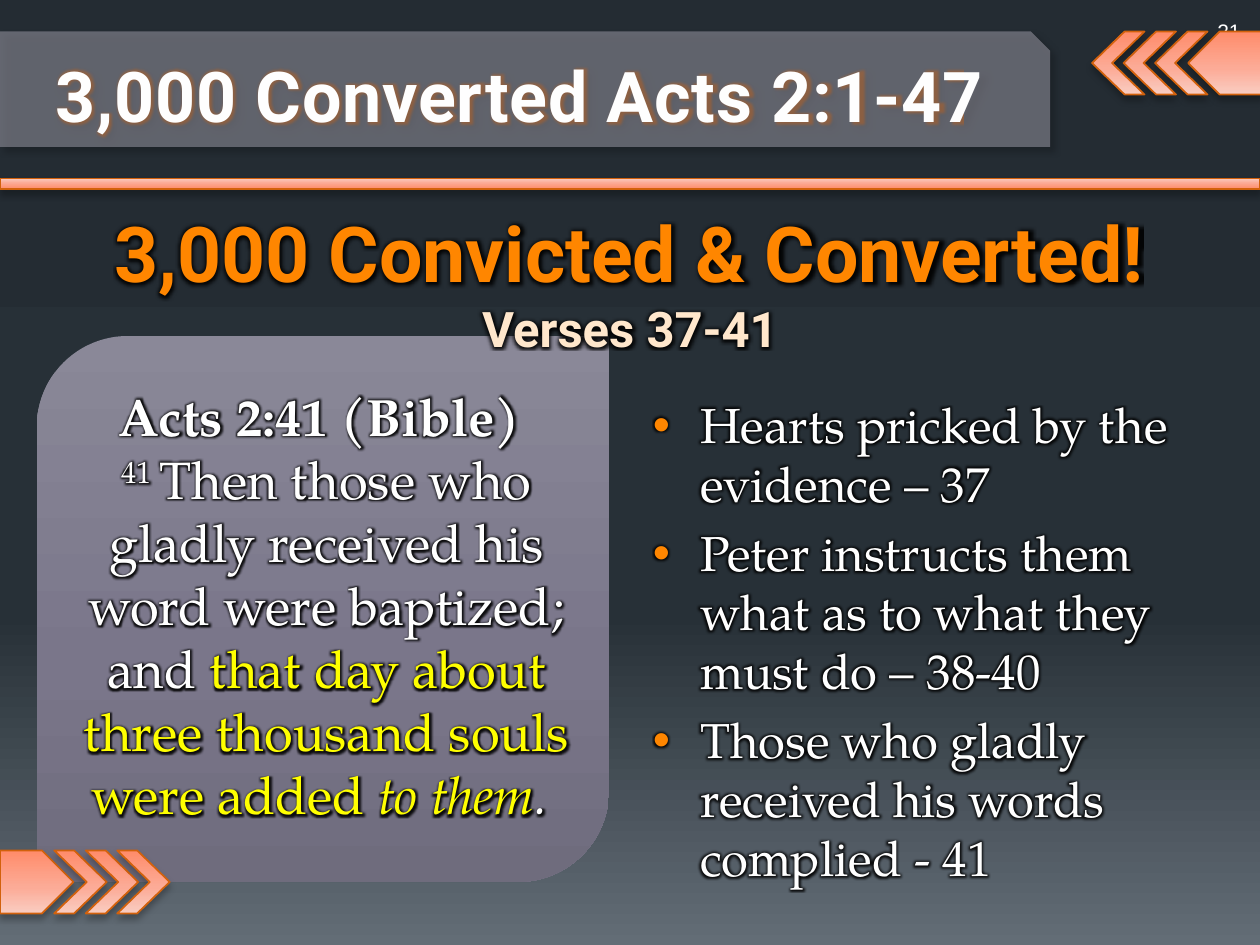
from dataclasses import dataclass, field
from typing import Any, Optional

from lxml import etree
from pptx import Presentation
from pptx import util as u
from pptx.dml import color as dml
from pptx.enum import shapes, text
from pptx.oxml import ns

Pt = u.Pt
Kind = shapes.MSO_SHAPE
Align = text.PP_ALIGN

HUES = {
    "white": "FFFFFF", "pale": "FEFEFE", "black": "000000",
    "orange": "FF8600", "cream": "FFE7CC", "yellow": "FFFF00",
    "rust": "D2610C", "slate": "646073", "mist": "A8A6B2",
}
FADES = {
    "night": [(0, "242C33"), (65, "273037"), (100, "636D76")],
    "panel": [(0, "8A8898"), (60, "7A768A"), (100, "6F6C7D")],
    "coral": [(0, "F9CDC2"), (41, "FCAB97"), (100, "FF8C6A")],
}
HEAD, BODY = "Roboto", "TeX Gyre Pagella"


@dataclass
class Box:
    x: float
    y: float
    w: float
    h: float


@dataclass
class Run:
    words: str
    size: float
    face: str
    hue: str = "white"
    form: dict[str, Any] = field(default_factory=dict)
    glow: Optional[tuple[str, int, float]] = ("black", 90, 4)
    raised: bool = False
    split: bool = False


@dataclass
class Para:
    runs: list[Run]
    form: dict[str, Any] = field(default_factory=dict)
    dot: bool = False


def node(parent: Any, tag: str, **attrs: Any) -> Any:
    return etree.SubElement(parent, ns.qn("a:" + tag), {k: str(v) for k, v in attrs.items()})


def tint(parent: Any, hue: str, alpha: int = 100) -> None:
    shade = node(parent, "srgbClr", val=hue)
    if alpha < 100:
        node(shade, "alpha", val=alpha * 1000)


def fade(fill: Any, root: Any, name: str, angle: int = 270) -> None:
    fill.gradient()
    fill.gradient_angle = angle
    stops = root.find(".//" + ns.qn("a:gsLst"))
    for stop in list(stops):
        stops.remove(stop)
    for pos, hue in FADES[name]:
        tint(node(stops, "gs", pos=pos * 1000), hue)


def shade(shape: Any, alpha: int, turn: int) -> None:
    list_ = shape.element.spPr.find(ns.qn("a:effectLst"))
    cast = node(list_, "outerShdw", blurRad=Pt(4), dist=Pt(3), dir=turn * 60000, rotWithShape=0)
    tint(cast, HUES["black"], alpha)


def draw(slide: Any, kind: Any, box: Box) -> Any:
    shape = slide.shapes.add_shape(kind, Pt(box.x), Pt(box.y), Pt(box.w), Pt(box.h))
    shape.shadow.inherit = False
    shape.line.fill.background()
    return shape


def trim(slide: Any, kind: Any, box: Box, angle: int = 270, spin: int = 0) -> Any:
    shape = draw(slide, kind, box)
    fade(shape.fill, shape.element, "coral", angle)
    shape.line.color.rgb = dml.RGBColor.from_string(HUES["rust"])
    shape.line.width = Pt(1)
    shape.rotation = spin
    shade(shape, 28, 90)
    return shape


def arrows(slide: Any, y: float, back: bool) -> None:
    spin, angle = (180, 270) if back else (0, 90)
    parts = [(Kind.PENTAGON, 0, 42)] + [(Kind.CHEVRON, 31 + 18 * i, 30) for i in range(3)]
    for kind, x, w in parts:
        left = 721 - x - w if back else x
        shape = trim(slide, kind, Box(left, y, w, 36), angle, spin)
        if kind == Kind.CHEVRON:
            shape.adjustments[0] = 0.62


def write(frame: Any, paras: list[Para], anchor: Any = text.MSO_ANCHOR.TOP) -> None:
    frame.word_wrap = True
    frame.vertical_anchor = anchor
    for i, para in enumerate(paras):
        line = frame.add_paragraph() if i else frame.paragraphs[0]
        for key, val in para.form.items():
            setattr(line, key, val)
        if para.dot:
            props = line._p.get_or_add_pPr()
            props.set("marL", str(Pt(27)))
            props.set("indent", str(-Pt(27)))
            tint(node(props, "buClr"), HUES["orange"])
            node(props, "buFont", typeface="Arial")
            node(props, "buChar", char="•")
        for run in para.runs:
            say(line, run)


def say(line: Any, run: Run) -> None:
    part = line.add_run()
    part.text = run.words
    part.font.color.rgb = dml.RGBColor.from_string(HUES[run.hue])
    form = {"size": Pt(run.size), "name": run.face, **run.form}
    for key, val in form.items():
        setattr(part.font, key, val)
    props = part.font._element
    if run.raised:
        props.set("baseline", "30000")
    if run.glow:
        hue, alpha, rad = run.glow
        list_ = node(props, "effectLst")
        tint(node(list_, "glow", rad=Pt(rad)), HUES[hue], alpha)
        props.find(ns.qn("a:latin")).addprevious(list_)
    if run.split:
        line.add_line_break()


def note(slide: Any, box: Box, paras: list[Para], anchor: Any = text.MSO_ANCHOR.TOP) -> None:
    shape = slide.shapes.add_textbox(Pt(box.x), Pt(box.y), Pt(box.w), Pt(box.h))
    write(shape.text_frame, paras, anchor)


def title(slide: Any) -> None:
    bar = draw(slide, Kind.SNIP_1_RECTANGLE, Box(0, 18, 600, 66))
    bar.fill.solid()
    bar.fill.fore_color.rgb = dml.RGBColor.from_string(HUES["mist"])
    node(bar.element.spPr.find(".//" + ns.qn("a:srgbClr")), "alpha", val=49000)
    shade(bar, 40, 45)
    run = Run("3,000 Converted Acts 2:1-47", 40, HEAD, "pale", {"bold": True}, ("rust", 40, 5))
    write(bar.text_frame, [Para([run], {"alignment": Align.CENTER})], text.MSO_ANCHOR.MIDDLE)
    props = bar.text_frame.paragraphs[0].runs[0].font._element
    props.set("spc", "50")
    edge = node(props, "ln", w=Pt(1))
    tint(node(edge, "solidFill"), HUES["slate"])
    props.insert(0, edge)


def main() -> None:
    deck = Presentation()
    deck.slide_width, deck.slide_height = Pt(720), Pt(540)
    slide = deck.slides.add_slide(deck.slide_layouts[6])
    fade(slide.background.fill, slide.element, "night")

    panel = draw(slide, Kind.ROUND_2_DIAG_RECTANGLE, Box(21, 192, 327, 312))
    fade(panel.fill, panel.element, "panel")
    page = Run("21", 12, "Arial", glow=None)
    note(slide, Box(642, 6, 74, 24), [Para([page], {"alignment": Align.RIGHT})],
         text.MSO_ANCHOR.MIDDLE)
    arrows(slide, 18, True)
    arrows(slide, 486, False)
    trim(slide, Kind.RECTANGLE, Box(0, 102, 720, 6))
    title(slide)

    points = [
        "Hearts pricked by the evidence – 37",
        "Peter instructs them what as to what they must do – 38-40",
        "Those who gladly received his words complied - 41",
    ]
    note(slide, Box(366, 222, 348, 291),
         [Para([Run(p, 28, BODY)], {"space_after": Pt(6)}, True) for p in points])

    mid, bold = {"alignment": Align.CENTER}, {"bold": True}
    note(slide, Box(12, 114, 696, 94), [
        Para([Run("3,000 Convicted & Converted!", 44, HEAD, "orange", bold)], mid),
        Para([Run("Verses 37-41", 28, HEAD, "cream", bold)], mid),
    ])
    slant = {"italic": True}
    note(slide, Box(31, 216, 311, 262), [Para([
        Run("Acts 2:41 (Bible) ", 30, BODY, form=bold, split=True),
        Run("41 ", 30, BODY, raised=True),
        Run("Then those who gladly received his word were baptized; and ", 30, BODY),
        Run("that day about three thousand souls were added ", 30, BODY, "yellow"),
        Run("to them", 30, BODY, "yellow", slant),
        Run(". ", 30, BODY, form=slant),
    ], mid)])
    deck.save("out.pptx")


if __name__ == "__main__":
    main()
